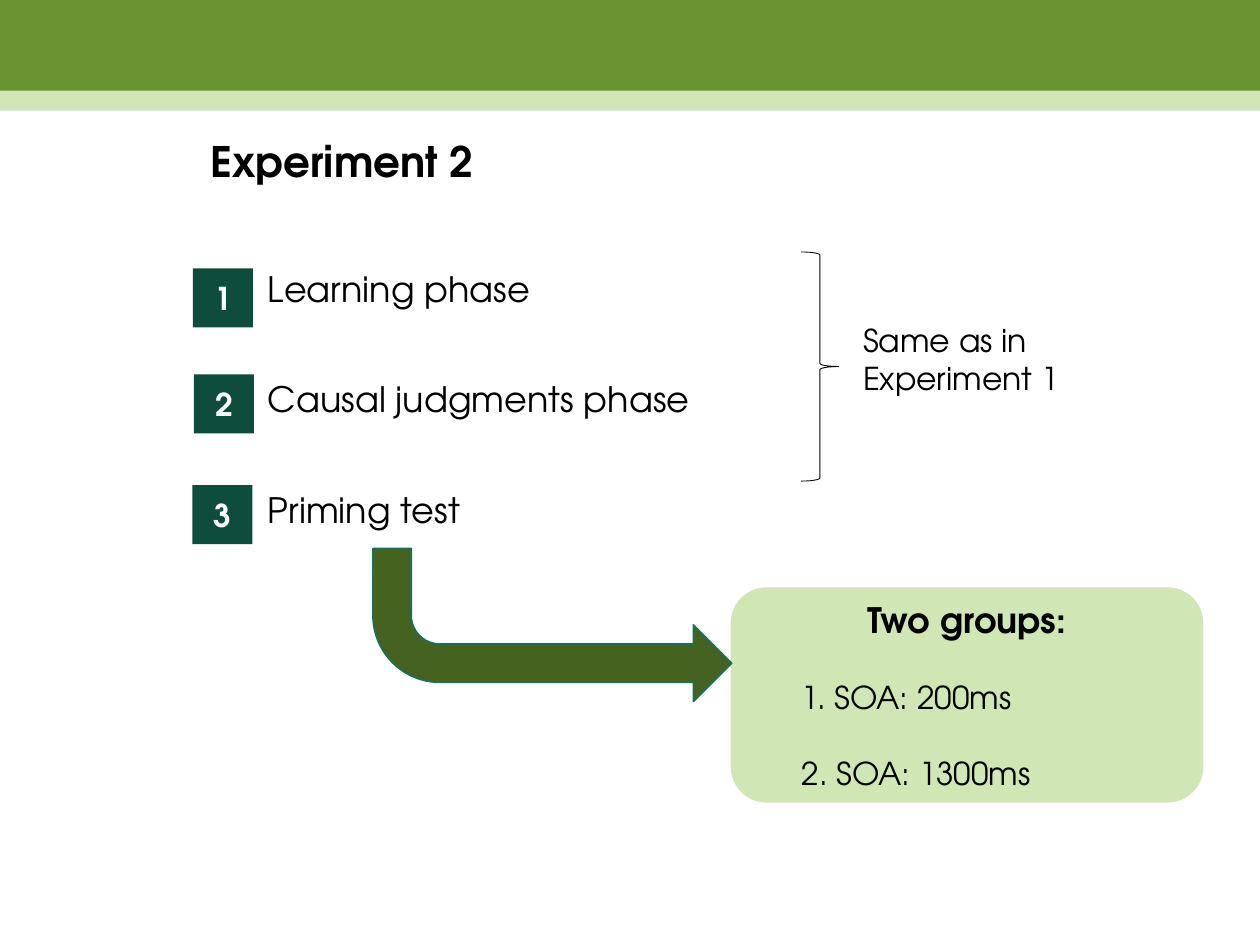
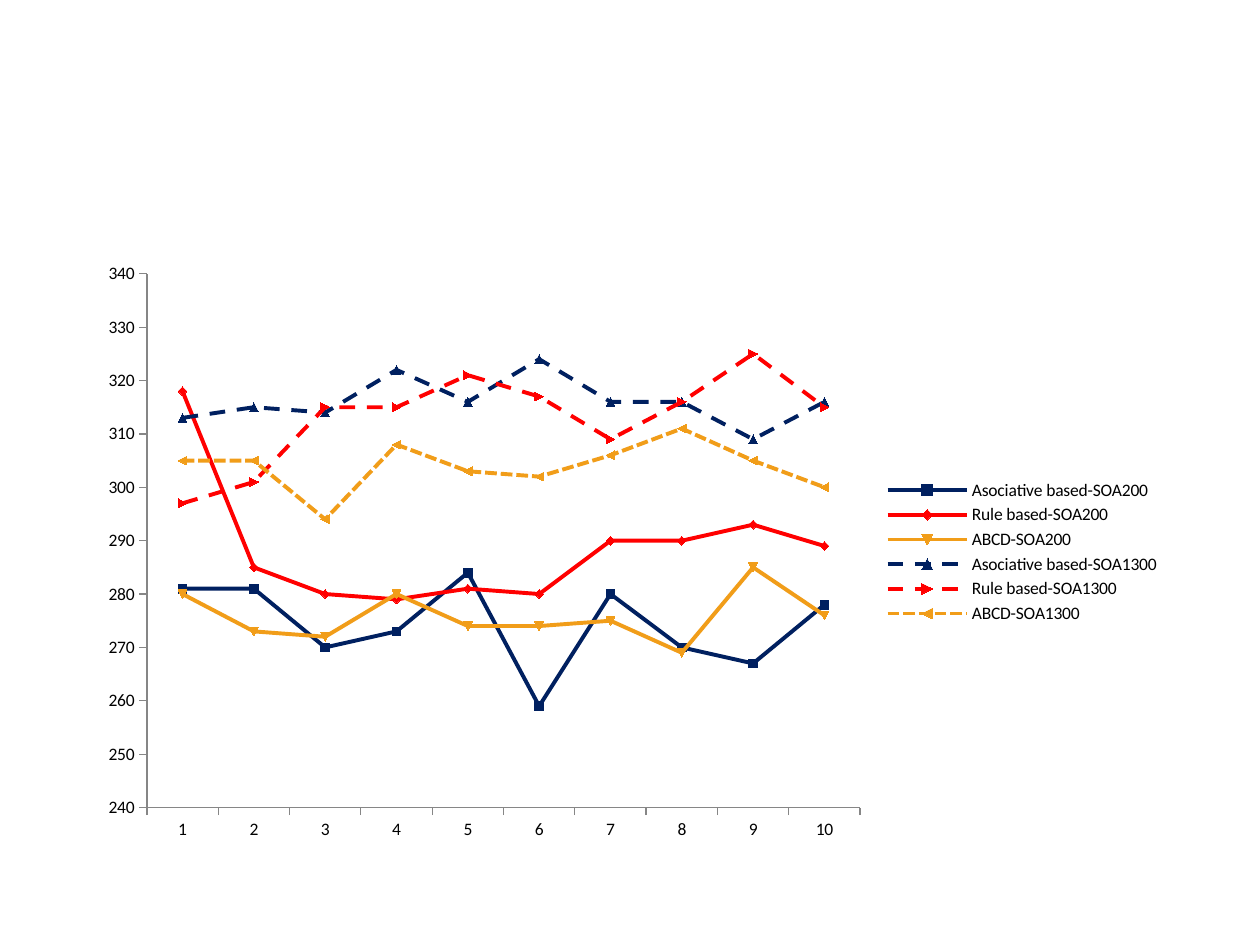
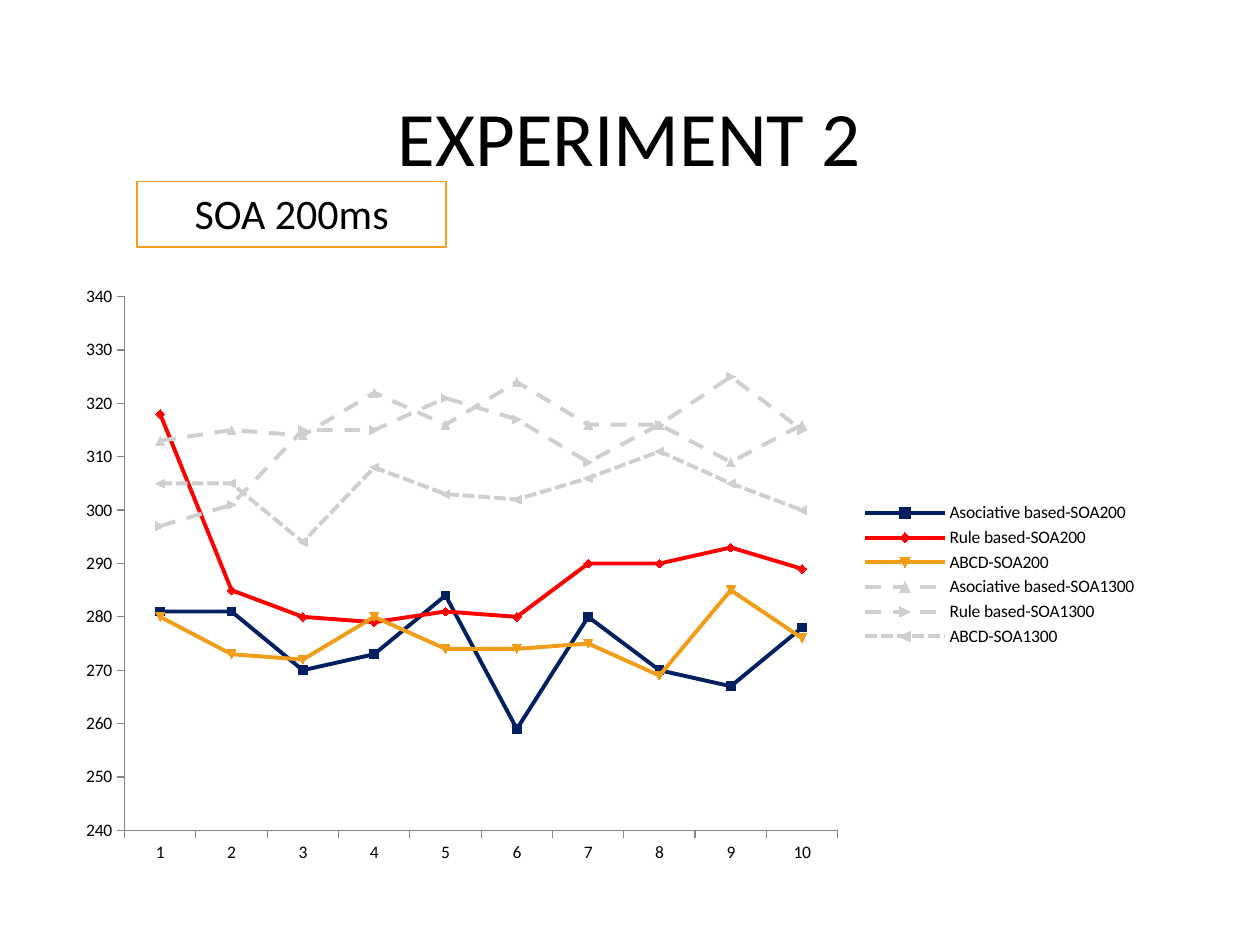
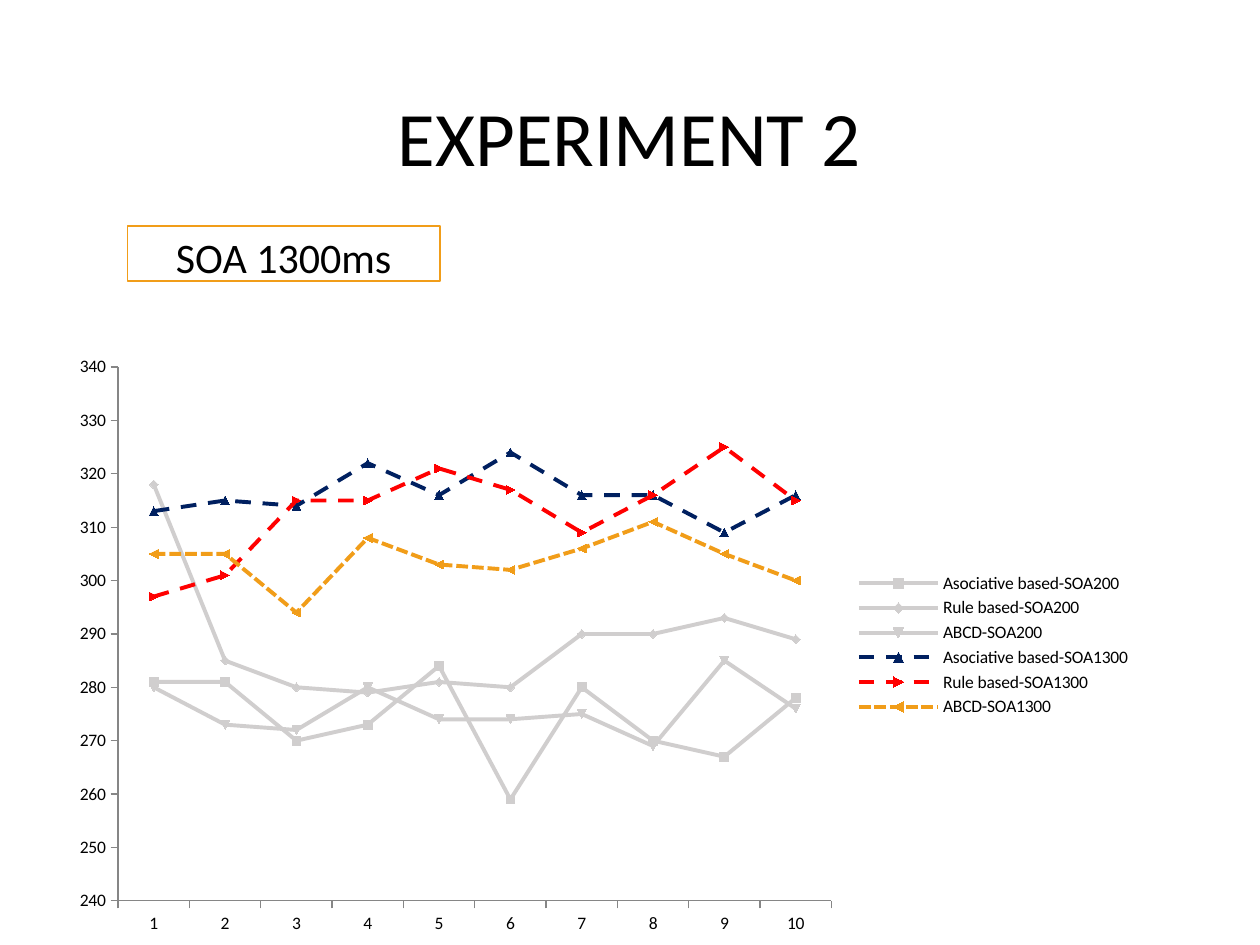
from pptx import Presentation
from pptx.chart.data import CategoryChartData
from pptx.dml.color import RGBColor
from pptx.enum.chart import XL_CHART_TYPE, XL_LEGEND_POSITION, XL_MARKER_STYLE, XL_TICK_MARK
from pptx.enum.dml import MSO_LINE
from pptx.enum.shapes import MSO_SHAPE
from pptx.enum.text import MSO_ANCHOR, PP_ALIGN
from pptx.util import Cm, Pt

BLACK, WHITE, GREY = "000000", "FFFFFF", "D0CECE"
NAVY, RED, ORANGE = "002060", "FF0000", "F19D19"
BAND_GREEN, PALE_GREEN, DARK_GREEN = "699331", "D1E6B5", "0E4D3C"
ARROW_GREEN, ARROW_EDGE, AXIS_GREY = "466221", "157259", "868686"
HEADING_FONT, CHART_FONT = "TeX Gyre Adventor", "Calibri"

CHART_SIZE = (21.89, 12.09)
CONDITIONS = [("Asociative based", NAVY), ("Rule based", RED), ("ABCD", ORANGE)]
REACTION_TIMES = {
    "SOA200": [
        [281, 281, 270, 273, 284, 259, 280, 270, 267, 278],
        [318, 285, 280, 279, 281, 280, 290, 290, 293, 289],
        [280, 273, 272, 280, 274, 274, 275, 269, 285, 276],
    ],
    "SOA1300": [
        [313, 315, 314, 322, 316, 324, 316, 316, 309, 316],
        [297, 301, 315, 315, 321, 317, 309, 316, 325, 315],
        [305, 305, 294, 308, 303, 302, 306, 311, 305, 300],
    ],
}
DASHES = {
    "SOA200": [MSO_LINE.SOLID] * 3,
    "SOA1300": [MSO_LINE.DASH, MSO_LINE.DASH, MSO_LINE.SQUARE_DOT],
}


def color(hex_value):
    return RGBColor.from_string(hex_value)


def set_values(target, values):
    for name, value in values.items():
        setattr(target, name, value)


def set_font(font, size, name, hex_value=BLACK, bold=False):
    set_values(font, {"size": Pt(size), "name": name, "bold": bold})
    font.color.rgb = color(hex_value)


def set_line(line, hex_value, width):
    line.color.rgb = color(hex_value)
    line.width = Pt(width)


def add_paragraph(frame, text, size, font=HEADING_FONT, hex_value=BLACK, bold=False, **layout):
    """Fill the frame's empty first paragraph, or append another one."""
    first = frame.paragraphs[0]
    paragraph = frame.add_paragraph() if first.runs else first
    set_values(paragraph, {"alignment": PP_ALIGN.LEFT, **layout})
    run = paragraph.add_run()
    run.text = text
    set_font(run.font, size, font, hex_value, bold)
    return paragraph


def add_shape(slide, kind, box, fill=None, line=None, anchor=MSO_ANCHOR.MIDDLE):
    shape = slide.shapes.add_shape(kind, *map(Cm, box))
    shape.shadow.inherit = False
    if fill:
        shape.fill.solid()
        shape.fill.fore_color.rgb = color(fill)
    else:
        shape.fill.background()
    if line:
        set_line(shape.line, *line)
    else:
        shape.line.fill.background()
    set_values(shape.text_frame, {"word_wrap": True, "vertical_anchor": anchor})
    return shape


def add_text_box(slide, box, anchor=MSO_ANCHOR.TOP):
    frame = slide.shapes.add_textbox(*map(Cm, box)).text_frame
    set_values(frame, {"word_wrap": True, "vertical_anchor": anchor})
    return frame


def add_title(slide, text, box, size, font, bold=False):
    frame = add_text_box(slide, box, MSO_ANCHOR.MIDDLE)
    add_paragraph(frame, text, size, font, bold=bold,
                  alignment=PP_ALIGN.CENTER, line_spacing=0.9)


def add_phase_number(slide, number, left, top):
    square = add_shape(slide, MSO_SHAPE.RECTANGLE, (left, top, 1.21, 1.19), DARK_GREEN)
    add_paragraph(square.text_frame, str(number), 18, hex_value=WHITE, bold=True,
                  alignment=PP_ALIGN.CENTER)


def add_interval_label(slide, text, box):
    label = add_shape(slide, MSO_SHAPE.RECTANGLE, box, WHITE, (ORANGE, 1), MSO_ANCHOR.TOP)
    add_paragraph(label.text_frame, text, 24, CHART_FONT, alignment=PP_ALIGN.CENTER)


def format_series(series, hex_value, dash):
    series.smooth = False
    set_line(series.format.line, hex_value, 2.25)
    series.format.line.dash_style = dash
    set_values(series.marker, {"style": XL_MARKER_STYLE.AUTOMATIC, "size": 5})
    series.marker.format.fill.solid()
    series.marker.format.fill.fore_color.rgb = color(hex_value)
    series.marker.format.line.fill.background()


def add_reaction_chart(slide, left, top, highlighted):
    """Draw every series, greying those whose interval is not highlighted."""
    data = CategoryChartData()
    data.categories = [str(block) for block in range(1, 11)]
    styles = []
    for interval, rows in REACTION_TIMES.items():
        for (condition, hex_value), values, dash in zip(CONDITIONS, rows, DASHES[interval]):
            data.add_series(f"{condition}-{interval}", values)
            styles.append((hex_value if interval in highlighted else GREY, dash))

    box = map(Cm, (left, top, *CHART_SIZE))
    chart = slide.shapes.add_chart(XL_CHART_TYPE.LINE_MARKERS, *box, data).chart
    set_values(chart, {"has_title": False, "has_legend": True})
    set_font(chart.font, 10, CHART_FONT)
    set_values(chart.legend, {"position": XL_LEGEND_POSITION.RIGHT, "include_in_layout": False})
    set_values(chart.value_axis, {"minimum_scale": 240, "maximum_scale": 340, "major_unit": 10})
    for axis in (chart.category_axis, chart.value_axis):
        set_values(axis, {"has_major_gridlines": False,
                          "major_tick_mark": XL_TICK_MARK.OUTSIDE,
                          "minor_tick_mark": XL_TICK_MARK.NONE})
        set_line(axis.format.line, AXIS_GREY, 0.75)
    plot = chart.plots[0]
    plot.vary_by_categories = False
    for series, style in zip(plot.series, styles):
        format_series(series, *style)


def add_groups_panel(slide):
    panel = add_shape(slide, MSO_SHAPE.ROUNDED_RECTANGLE, (14.73, 11.84, 9.53, 4.34), PALE_GREEN)
    frame = panel.text_frame
    add_paragraph(frame, "Two groups:", 20, bold=True, alignment=PP_ALIGN.CENTER)
    for text in ("1. SOA: 200ms", "2. SOA: 1300ms"):
        paragraph = add_paragraph(frame, text, 18, space_before=Pt(21.5))
        paragraph._p.get_or_add_pPr().set("marL", str(Cm(0.97)))


def build_procedure_slide(slide):
    add_shape(slide, MSO_SHAPE.RIGHT_BRACE, (16.15, 5.08, 0.76, 4.62), line=(BLACK, 0.5))
    add_paragraph(add_text_box(slide, (17.15, 6.35, 5.21, 1.8)), "Same as in Experiment 1", 18)
    add_groups_panel(slide)
    add_title(slide, "Experiment 2", (0, 1.3, 13.79, 3.99), 24, HEADING_FONT, bold=True)
    add_shape(slide, MSO_SHAPE.RECTANGLE, (0, 0, 25.4, 2.21), BAND_GREEN)
    add_shape(slide, MSO_SHAPE.RECTANGLE, (0, 1.83, 25.4, 0.4), PALE_GREEN)

    phases = add_text_box(slide, (5.05, 5.36, 14.63, 7.95))
    for text in ("Learning phase", "Causal judgments phase", "Priming test"):
        paragraph = add_paragraph(phases, text, 20, line_spacing=0.9, space_after=Pt(41.5))
        paragraph._p.get_or_add_pPr().set("marL", str(Cm(0.1)))
    for number, (left, top) in enumerate([(3.89, 5.41), (3.91, 7.55), (3.88, 9.78)], 1):
        add_phase_number(slide, number, left, top)

    arrow = add_shape(slide, MSO_SHAPE.BENT_ARROW, (7.52, 11.06, 7.23, 3.08),
                      ARROW_GREEN, (ARROW_EDGE, 1))
    arrow._element.spPr.xfrm.set("flipV", "1")


def build_interval_slide(slide, label, label_box, chart_position, interval):
    add_title(slide, "EXPERIMENT 2", (1.75, 1.02, 21.89, 3.68), 44, CHART_FONT)
    add_interval_label(slide, label, label_box)
    add_reaction_chart(slide, *chart_position, [interval])


def main():
    presentation = Presentation()
    set_values(presentation, {"slide_width": Cm(25.4), "slide_height": Cm(19.05)})
    blank = presentation.slide_layouts[6]
    procedure, overview, short, long = [presentation.slides.add_slide(blank) for _ in range(4)]

    build_procedure_slide(procedure)
    add_reaction_chart(overview, 1.75, 5.08, REACTION_TIMES)
    build_interval_slide(short, "SOA 200ms", (2.77, 3.66, 6.22, 1.32), (1.3, 5.54), "SOA200")
    build_interval_slide(long, "SOA 1300ms", (2.57, 4.55, 6.3, 1.12), (1.17, 6.96), "SOA1300")
    presentation.save("out.pptx")


if __name__ == "__main__":
    main()
